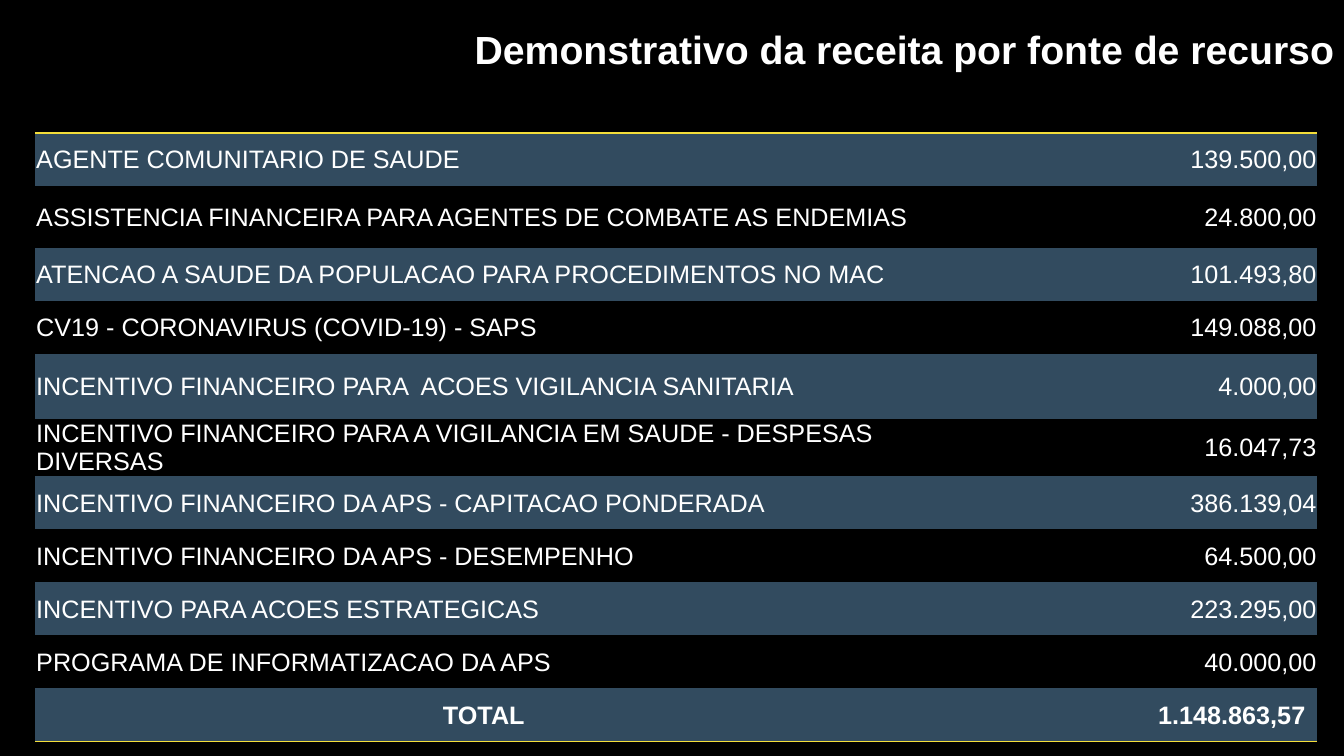
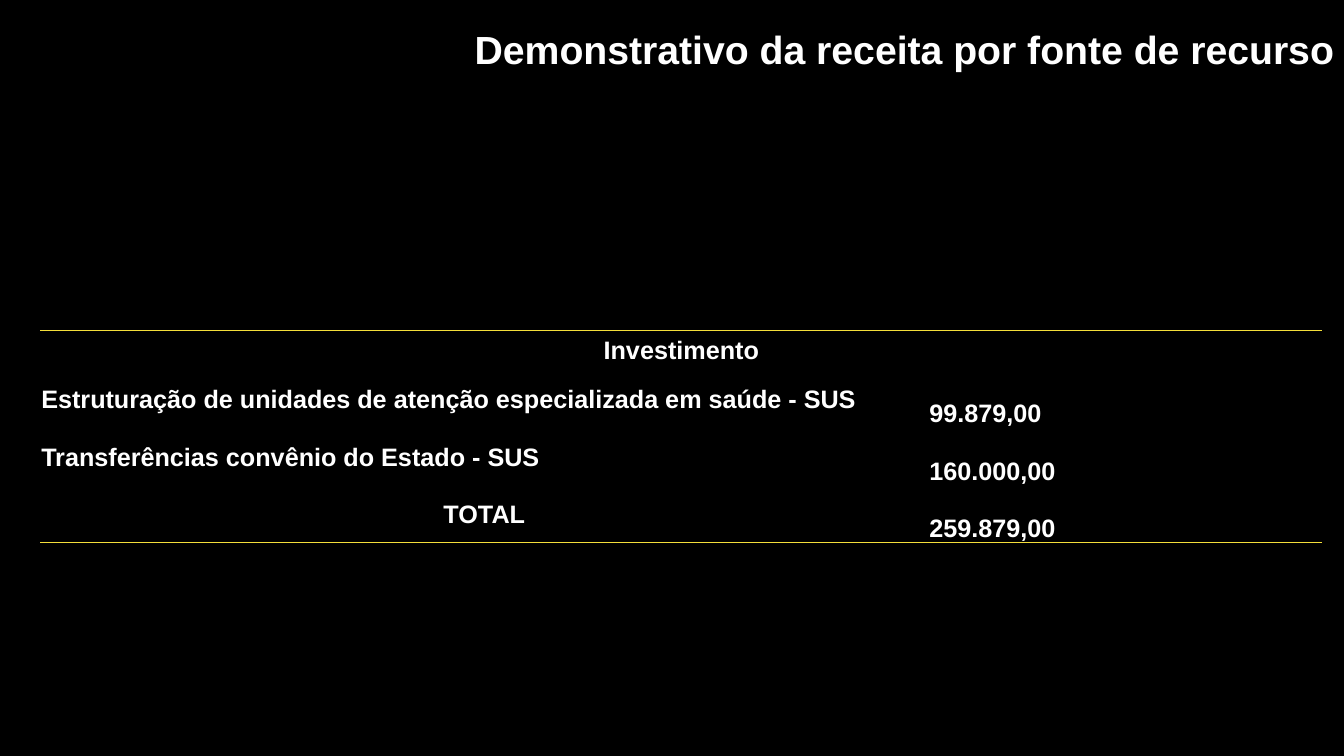
from lxml import etree
from pptx import Presentation
from pptx.dml.color import RGBColor
from pptx.enum import text
from pptx.oxml import ns
from pptx.util import Pt

COLOURS = {"background": "000000", "text": "FFFFFF", "band": "324B5F", "rule": "F4DE3A"}
FONT = "Arial"
TITLE = "Demonstrativo da receita por fonte de recurso"
NO_STYLE = "{2D5ABB26-0587-4C30-8999-92F81FD0307C}"
COLUMN_WIDTHS = (634.3, 281.5)
INSET = 0.7
LEFT, CENTER, RIGHT = text.PP_ALIGN.LEFT, text.PP_ALIGN.CENTER, text.PP_ALIGN.RIGHT
MIDDLE, BOTTOM = text.MSO_ANCHOR.MIDDLE, text.MSO_ANCHOR.BOTTOM

ROW_HEIGHT = 37.9
REVENUES = [
    ("AGENTE COMUNITARIO DE SAUDE", "139.500,00", ROW_HEIGHT),
    ("ASSISTENCIA FINANCEIRA PARA AGENTES DE COMBATE AS ENDEMIAS", "24.800,00", 44.2),
    ("ATENCAO A SAUDE DA POPULACAO PARA PROCEDIMENTOS NO MAC", "101.493,80", ROW_HEIGHT),
    ("CV19 - CORONAVIRUS (COVID-19) - SAPS", "149.088,00", ROW_HEIGHT),
    ("INCENTIVO FINANCEIRO PARA  ACOES VIGILANCIA SANITARIA", "4.000,00", 46.3),
    ("INCENTIVO FINANCEIRO PARA A VIGILANCIA EM SAUDE - DESPESAS DIVERSAS", "16.047,73", 37.4),
    ("INCENTIVO FINANCEIRO DA APS - CAPITACAO PONDERADA", "386.139,04", ROW_HEIGHT),
    ("INCENTIVO FINANCEIRO DA APS - DESEMPENHO", "64.500,00", ROW_HEIGHT),
    ("INCENTIVO PARA ACOES ESTRATEGICAS", "223.295,00", ROW_HEIGHT),
    ("PROGRAMA DE INFORMATIZACAO DA APS", "40.000,00", ROW_HEIGHT),
    ("TOTAL", "1.148.863,57", ROW_HEIGHT),
]
INVESTMENTS = [
    ("Investimento", "", 28.8),
    ("Estruturação de unidades de atenção especializada em saúde - SUS", "99.879,00", 41),
    ("Transferências convênio do Estado - SUS", "160.000,00", 41),
    ("TOTAL", "259.879,00", 41),
]


def colour(name):
    return RGBColor.from_string(COLOURS[name])


def add_run(paragraph, words, size, bold, align):
    paragraph.alignment = align
    run = paragraph.add_run()
    run.text = words
    run.font.name = FONT
    run.font.size = Pt(size)
    run.font.bold = bold
    run.font.color.rgb = colour("text")


def set_up_master(presentation):
    """Give all slides the black background and the title position."""
    background = presentation.slide_master.background.fill
    background.solid()
    background.fore_color.rgb = colour("background")
    layout = presentation.slide_layouts.get_by_name("Title Only")
    title = layout.placeholders[0]
    title.left, title.top, title.width, title.height = Pt(201), Pt(14.4), Pt(759), Pt(41.2)
    return layout


def add_titled_slide(presentation, layout):
    slide = presentation.slides.add_slide(layout)
    frame = slide.shapes.title.text_frame
    frame.word_wrap = True
    frame.auto_size = text.MSO_AUTO_SIZE.NONE
    frame.vertical_anchor = MIDDLE
    add_run(frame.paragraphs[0], TITLE, 28, True, RIGHT)
    return slide


def add_rule(cell, side):
    """Draw a cell border; side is lnT or lnB. Call before filling the cell."""
    properties = cell._tc.get_or_add_tcPr()
    line = etree.SubElement(properties, ns.qn(f"a:{side}"), w=str(Pt(1)))
    fill = etree.SubElement(line, ns.qn("a:solidFill"))
    etree.SubElement(fill, ns.qn("a:srgbClr"), val=COLOURS["rule"])


def set_cell(cell, words, align, bold, anchor=MIDDLE, left=INSET, right=INSET):
    cell.margin_left, cell.margin_right = Pt(left), Pt(right)
    cell.margin_top, cell.margin_bottom = Pt(INSET), Pt(0)
    cell.vertical_anchor = anchor
    add_run(cell.text_frame.paragraphs[0], words, 18, bold, align)


def add_plain_table(slide, rows, left, top, rule_rows, banded=False):
    """Add an empty table with column widths, row heights, rules and fills."""
    height = sum(row[2] for row in rows)
    frame = slide.shapes.add_table(
        len(rows), 2, Pt(left), Pt(top), Pt(sum(COLUMN_WIDTHS)), Pt(height))
    for style in frame._element.iter(ns.qn("a:tableStyleId")):
        style.text = NO_STYLE
    table = frame.table
    table.first_row = table.horz_banding = False
    for column, width in zip(table.columns, COLUMN_WIDTHS):
        column.width = Pt(width)
    for index, row in enumerate(table.rows):
        row.height = Pt(rows[index][2])
        for cell in row.cells:
            if index in rule_rows:
                add_rule(cell, rule_rows[index])
            if banded and index % 2 == 0:
                cell.fill.solid()
                cell.fill.fore_color.rgb = colour("band")
            else:
                cell.fill.background()
    return table


def add_revenue_table(slide):
    last = len(REVENUES) - 1
    table = add_plain_table(slide, REVENUES, 25.2, 95, {0: "lnT", last: "lnB"}, banded=True)
    for index, (source, amount, _) in enumerate(REVENUES):
        label, value = table.rows[index].cells
        if index == last:
            set_cell(label, source, CENTER, True, left=6.5, right=0)
            set_cell(value, amount, RIGHT, True, right=8.6)
        else:
            set_cell(label, source, LEFT, False)
            set_cell(value, amount, RIGHT, False)


def add_investment_table(slide):
    last = len(INVESTMENTS) - 1
    table = add_plain_table(slide, INVESTMENTS, 28.8, 236, {0: "lnT", last: "lnB"})
    table.cell(0, 0).merge(table.cell(0, 1))
    for index, (source, amount, _) in enumerate(INVESTMENTS):
        label, value = table.rows[index].cells
        set_cell(label, source, CENTER if index in (0, last) else LEFT, True)
        if amount:
            set_cell(value, amount, LEFT, True, anchor=BOTTOM)


def main():
    presentation = Presentation()
    presentation.slide_width, presentation.slide_height = Pt(960), Pt(540)
    layout = set_up_master(presentation)
    add_revenue_table(add_titled_slide(presentation, layout))
    add_investment_table(add_titled_slide(presentation, layout))
    presentation.save("out.pptx")


if __name__ == "__main__":
    main()
